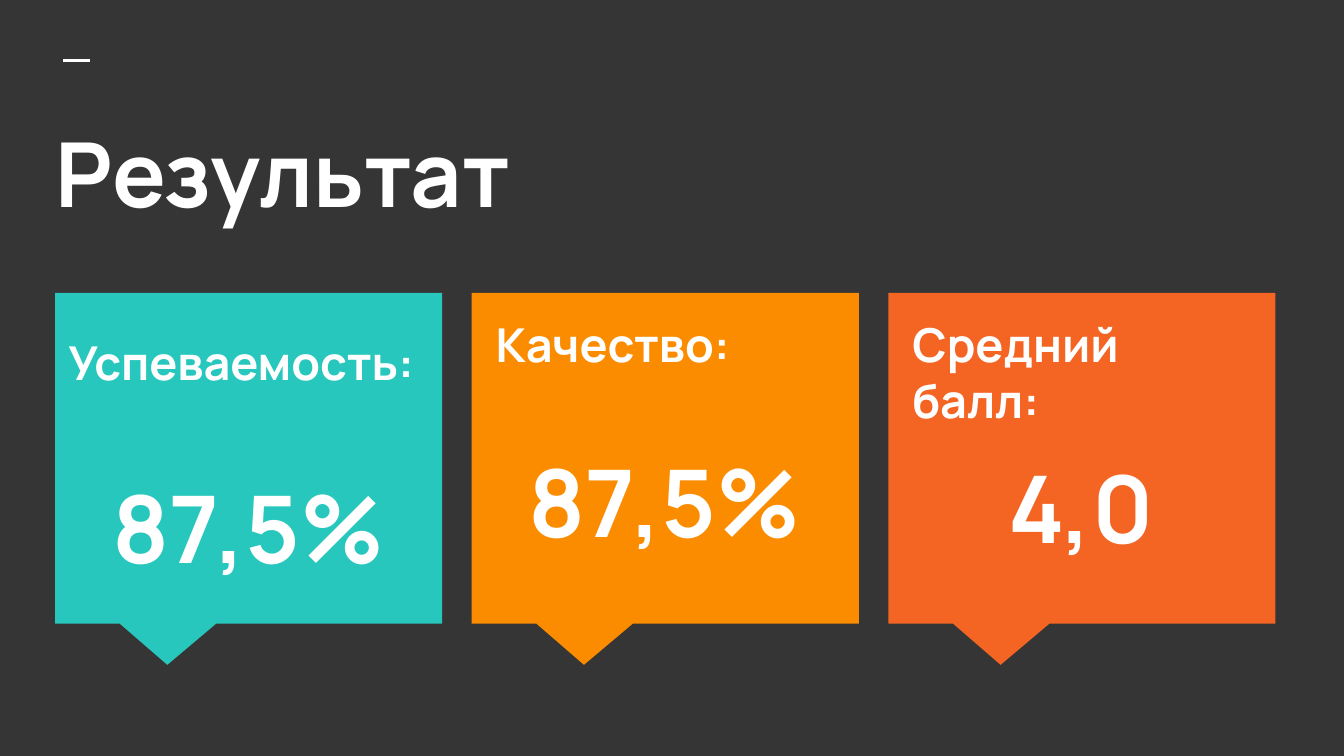
import dataclasses

import lxml.etree
import pptx
import pptx.dml.color
import pptx.enum.shapes
import pptx.enum.text
import pptx.oxml.ns
import pptx.util

Inches = pptx.util.Inches
Pt = pptx.util.Pt
Align = pptx.enum.text.PP_ALIGN
Anchor = pptx.enum.text.MSO_ANCHOR

FONT = "Manrope"
COLORS = {
    "back": "353535",
    "text": "FFFFFF",
    "teal": "27C7BD",
    "amber": "FB8C00",
    "coral": "F46524",
}
LEFT, TOP, WIDTH, HEIGHT = 0.41, 2.18, 2.88, 2.46
STEP = 3.1


@dataclasses.dataclass
class Card:
    color: str
    label: str
    value: str
    gap: float  # points between label and value
    boxed: bool  # text in its own box over the callout


CARDS = [
    Card("teal", "Успеваемость:", "87,5%", 43, False),
    Card("amber", "Качество:", "87,5%", 39, True),
    Card("coral", "Средний балл:", "4,0", 12, True),
]


def tint(name: str) -> pptx.dml.color.RGBColor:
    return pptx.dml.color.RGBColor.from_string(COLORS[name])


def set_frame(frame, anchor) -> None:
    frame.word_wrap = True
    frame.auto_size = pptx.enum.text.MSO_AUTO_SIZE.NONE
    frame.vertical_anchor = anchor
    frame.margin_left = frame.margin_right = Inches(0.1)
    frame.margin_top = frame.margin_bottom = Inches(0.1)


def write(par, text: str, size: float, align=Align.LEFT, before: float = 0) -> None:
    par.text = text
    par.alignment = align
    par.line_spacing = 1.0
    par.space_before = Pt(before)
    for run in par.runs:
        run.font.name = FONT
        run.font.size = Pt(size)
        run.font.bold = True
        run.font.color.rgb = tint("text")


def add_dash(slide) -> None:
    line = slide.shapes.add_connector(
        pptx.enum.shapes.MSO_CONNECTOR.STRAIGHT,
        Inches(0.47), Inches(0.45), Inches(0.67), Inches(0.45))
    line.line.color.rgb = tint("text")
    line.line.width = Pt(1.5)
    lxml.etree.SubElement(line._element.spPr, pptx.oxml.ns.qn("a:effectLst"))


def add_title(slide, text: str) -> None:
    title = slide.shapes.title
    title.left, title.top = Inches(0.31), Inches(0.78)
    title.width, title.height = Inches(6.83), Inches(4.19)
    set_frame(title.text_frame, Anchor.TOP)
    write(title.text_frame.paragraphs[0], text, 48)


def add_card(slide, card: Card, left: float) -> None:
    shape = slide.shapes.add_shape(
        pptx.enum.shapes.MSO_SHAPE.RECTANGULAR_CALLOUT,
        Inches(left), Inches(TOP), Inches(WIDTH), Inches(HEIGHT))
    shape.adjustments[0] = -0.21
    shape.adjustments[1] = 5 / 8
    shape.shadow.inherit = False
    shape.fill.solid()
    shape.fill.fore_color.rgb = tint(card.color)
    shape.line.fill.background()
    frame, anchor = shape.text_frame, Anchor.MIDDLE
    if card.boxed:
        box = slide.shapes.add_textbox(
            Inches(left + 0.08), Inches(TOP + 0.07), Inches(2.71), Inches(2.19))
        frame, anchor = box.text_frame, Anchor.TOP
    set_frame(frame, anchor)
    write(frame.paragraphs[0], card.label, 25)
    write(frame.add_paragraph(), card.value, 50, Align.CENTER, card.gap)


def main() -> None:
    deck = pptx.Presentation()
    deck.slide_width = Inches(10)
    deck.slide_height = deck.slide_width * 9 // 16
    slide = deck.slides.add_slide(deck.slide_layouts[5])
    slide.background.fill.solid()
    slide.background.fill.fore_color.rgb = tint("back")
    add_dash(slide)
    add_title(slide, "Результат")
    for i, card in enumerate(CARDS):
        add_card(slide, card, LEFT + i * STEP)
    deck.save("out.pptx")


if __name__ == "__main__":
    main()
